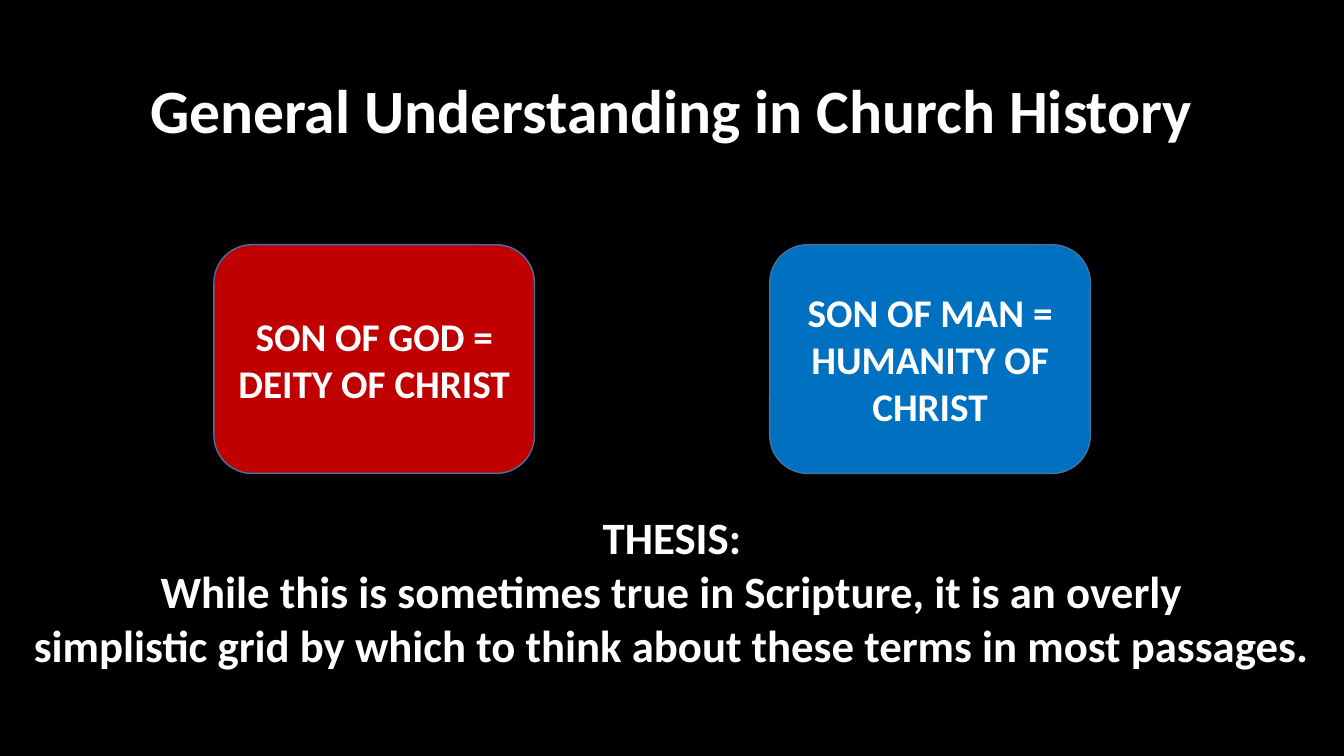
from dataclasses import dataclass
from pptx import Presentation
from pptx.dml.color import RGBColor
from pptx.enum import shapes, text
from pptx.util import Pt


@dataclass(frozen=True)
class Theme:
    font: str = "Calibri"
    background: RGBColor = RGBColor(0, 0, 0)
    ink: RGBColor = RGBColor(255, 255, 255)
    deity: RGBColor = RGBColor(0xC0, 0, 0)
    humanity: RGBColor = RGBColor(0, 0x70, 0xC0)
    outline: RGBColor = RGBColor(0x43, 0x73, 0x9E)
    title_size: int = 44
    card_size: int = 28
    thesis_size: int = 32


THEME = Theme()


def place(sp, box):
    sp.left, sp.top, sp.width, sp.height = (Pt(v) for v in box)


def write(tf, lines, size, anchor, spacing=1.0):
    """Fill a text frame with bold centred paragraphs."""
    tf.word_wrap = True
    tf.vertical_anchor = anchor
    tf.text = "\n".join(lines)
    for p in tf.paragraphs:
        p.alignment = text.PP_ALIGN.CENTER
        p.line_spacing = spacing
        p.font.name = THEME.font
        p.font.size = Pt(size)
        p.font.bold = True
        p.font.color.rgb = THEME.ink


def add_title(s, box, title):
    sp = s.shapes.title
    place(sp, box)
    sp.text_frame.auto_size = text.MSO_AUTO_SIZE.NONE
    write(sp.text_frame, [title], THEME.title_size, text.MSO_ANCHOR.MIDDLE, 0.9)


def add_cards(s, box, cards, card_width):
    """Spread equal cards from the left to the right edge of the box."""
    left, top, width, height = box
    step = (width - card_width) / (len(cards) - 1)
    for i, (label, color) in enumerate(cards):
        sp = s.shapes.add_shape(shapes.MSO_SHAPE.ROUNDED_RECTANGLE,
                                Pt(left + i * step), Pt(top), Pt(card_width), Pt(height))
        sp.shadow.inherit = False
        sp.fill.solid()
        sp.fill.fore_color.rgb = color
        sp.line.color.rgb = THEME.outline
        sp.line.width = Pt(1)
        write(sp.text_frame, [label], THEME.card_size, text.MSO_ANCHOR.MIDDLE)


def add_thesis(s, box, lines):
    sp = s.shapes.add_textbox(*(Pt(v) for v in box))
    write(sp.text_frame, lines, THEME.thesis_size, text.MSO_ANCHOR.TOP)
    sp.text_frame.auto_size = text.MSO_AUTO_SIZE.SHAPE_TO_FIT_TEXT


def main():
    prs = Presentation()
    prs.slide_width, prs.slide_height = Pt(960), Pt(540)
    s = prs.slides.add_slide(prs.slide_layouts.get_by_name("Title Only"))
    s.background.fill.solid()
    s.background.fill.fore_color.rgb = THEME.background

    # Title
    add_title(s, (0, 28.8, 960, 104.4), "General Understanding in Church History")

    # The two titles of Christ
    add_cards(s, (152.8, 174.8, 626, 163.4), [
        ("SON OF GOD = DEITY OF CHRIST", THEME.deity),
        ("SON OF MAN = HUMANITY OF CHRIST", THEME.humanity),
    ], card_width=229)

    # Thesis
    add_thesis(s, (0, 360.7, 960, 123.8), [
        "THESIS:",
        "While this is sometimes true in Scripture, it is an overly",
        "simplistic grid by which to think about these terms in most passages.",
    ])
    prs.save("out.pptx")


if __name__ == "__main__":
    main()
